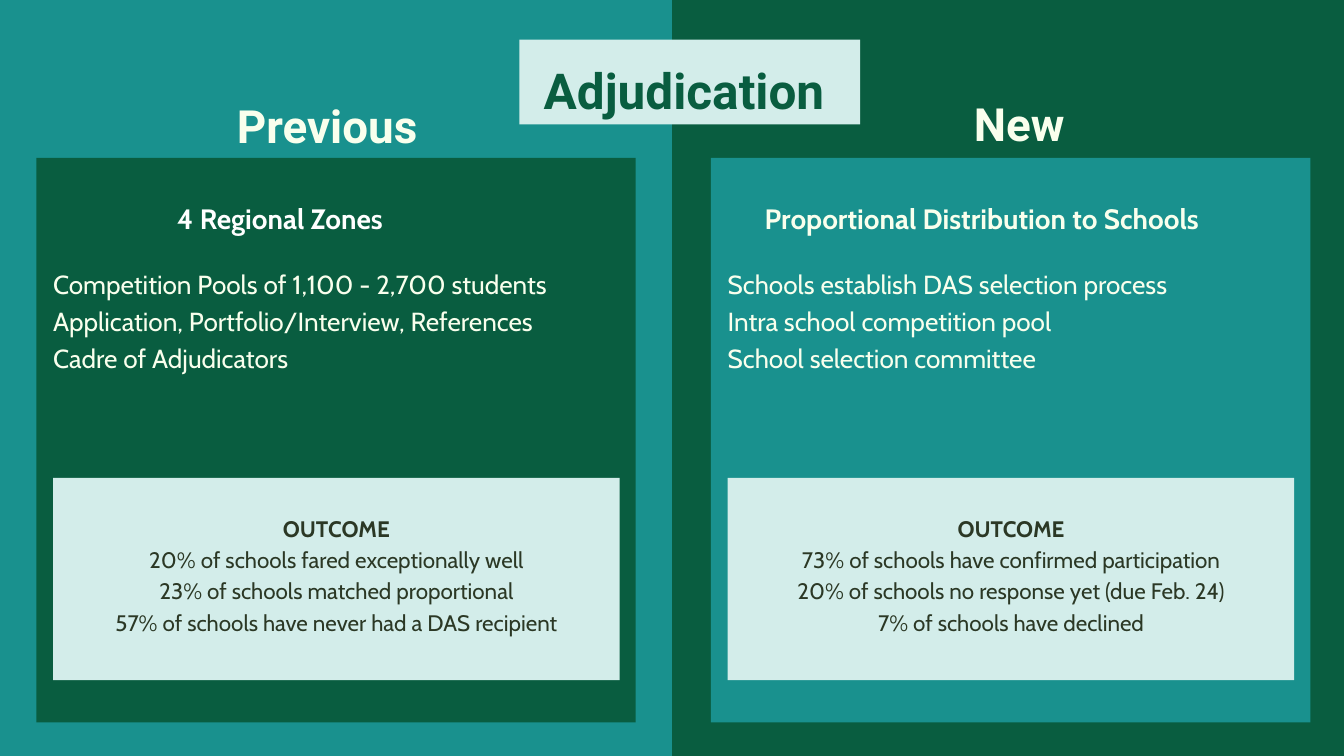
from dataclasses import dataclass

from pptx import Presentation
from pptx.dml.color import RGBColor
from pptx.enum.shapes import MSO_SHAPE
from pptx.enum.text import MSO_AUTO_SIZE, PP_ALIGN
from pptx.slide import Slide
from pptx.util import Inches, Pt

COLORS = {
    "green": "095D40",
    "teal": "19918E",
    "mint": "D3EDEA",
    "cream": "F9FFED",
    "white": "FFFFFF",
    "ink": "2B3825",
}

FORMATS = {
    "title": {"name": "Roboto", "size": Pt(53), "bold": True},
    "heading": {"name": "Roboto", "size": Pt(49), "bold": True},
    "subheading": {"name": "Cabin", "size": Pt(30), "bold": True},
    "body": {"name": "Cabin", "size": Pt(28), "bold": False},
    "outcome_label": {"name": "Cabin", "size": Pt(24), "bold": True},
    "outcome": {"name": "Cabin", "size": Pt(24), "bold": False},
}

LEADING = {
    "title": 58.3,
    "heading": 53.9,
    "subheading": 42.1,
    "body": 39.3,
    "outcome_label": 33.7,
    "outcome": 33.7,
}

SLIDE_WIDTH, SLIDE_HEIGHT = 20, 11.25
PANEL_TOP, PANEL_WIDTH, PANEL_HEIGHT = 2.35, 8.92, 8.4
PANEL_INSET, CONTENT_WIDTH = 0.25, 8.43


@dataclass(frozen=True)
class Box:
    left: float
    top: float
    width: float
    height: float


@dataclass(frozen=True)
class Line:
    text: str
    style: str
    color: str


@dataclass(frozen=True)
class Side:
    panel_left: float
    panel_color: str
    heading: str
    heading_box: Box
    subheading: Line
    subheading_box: Box
    subheading_align: PP_ALIGN
    points: tuple[str, ...]
    points_height: float
    outcomes: tuple[str, ...]


SIDES = (
    Side(
        0.54, "green",
        "Previous", Box(3.11, 1.53, 3.1, 0.76),
        Line("4 Regional Zones ", "subheading", "white"),
        Box(0, 2.91, 8.43, 0.56), PP_ALIGN.CENTER,
        (
            "Competition Pools of 1,100 - 2,700 students",
            "Application, Portfolio/Interview, References",
            "Cadre of Adjudicators",
        ),
        2.15,
        (
            "20% of schools fared exceptionally well",
            "23% of schools matched proportional",
            "57% of schools have never had a DAS recipient",
        ),
    ),
    Side(
        10.58, "teal",
        "New", Box(13.05, 1.5, 2.79, 0.76),
        Line("Proportional Distribution to Schools", "subheading", "cream"),
        Box(11.38, 2.91, 7.31, 0.56), PP_ALIGN.LEFT,
        (
            "Schools establish DAS selection process",
            "Intra school competition pool",
            "School selection committee",
        ),
        1.61,
        (
            "73% of schools have confirmed participation",
            "20% of schools no response yet (due Feb. 24)",
            "7% of schools have declined",
        ),
    ),
)


def rgb(color: str) -> RGBColor:
    return RGBColor.from_string(COLORS[color])


def lengths(box: Box) -> tuple[Inches, ...]:
    return tuple(Inches(v) for v in (box.left, box.top, box.width, box.height))


def draw_block(slide: Slide, box: Box, color: str) -> None:
    block = slide.shapes.add_shape(MSO_SHAPE.RECTANGLE, *lengths(box))
    block.shadow.inherit = False
    block.fill.solid()
    block.fill.fore_color.rgb = rgb(color)
    block.line.fill.background()


def draw_text(slide: Slide, box: Box, lines: list[Line], align: PP_ALIGN) -> None:
    frame = slide.shapes.add_textbox(*lengths(box)).text_frame
    frame_format = {
        "word_wrap": True,
        "auto_size": MSO_AUTO_SIZE.SHAPE_TO_FIT_TEXT,
        "margin_left": 0,
        "margin_top": 0,
        "margin_right": 0,
        "margin_bottom": 0,
    }
    for attribute, value in frame_format.items():
        setattr(frame, attribute, value)
    for index, line in enumerate(lines):
        paragraph = frame.add_paragraph() if index else frame.paragraphs[0]
        paragraph.alignment = align
        paragraph.line_spacing = Pt(LEADING[line.style])
        run = paragraph.add_run()
        run.text = line.text
        for attribute, value in FORMATS[line.style].items():
            setattr(run.font, attribute, value)
        run.font.color.rgb = rgb(line.color)


def draw_side(slide: Slide, side: Side) -> None:
    content_left = side.panel_left + PANEL_INSET
    panel = Box(side.panel_left, PANEL_TOP, PANEL_WIDTH, PANEL_HEIGHT)
    draw_block(slide, panel, side.panel_color)
    draw_block(slide, Box(content_left, 7.11, CONTENT_WIDTH, 3.01), "mint")

    heading = Line(side.heading, "heading", "cream")
    draw_text(slide, side.heading_box, [heading], PP_ALIGN.RIGHT)
    draw_text(slide, side.subheading_box, [side.subheading], side.subheading_align)

    points = [Line(point, "body", "cream") for point in side.points]
    points_box = Box(content_left, 3.92, CONTENT_WIDTH, side.points_height)
    draw_text(slide, points_box, points, PP_ALIGN.LEFT)

    outcomes = [Line("OUTCOME", "outcome_label", "ink")]
    outcomes += [Line(outcome, "outcome", "ink") for outcome in side.outcomes]
    outcomes_box = Box(content_left, 7.59, CONTENT_WIDTH, 1.82)
    draw_text(slide, outcomes_box, outcomes, PP_ALIGN.CENTER)


def main() -> None:
    presentation = Presentation()
    presentation.slide_width = Inches(SLIDE_WIDTH)
    presentation.slide_height = Inches(SLIDE_HEIGHT)
    slide = presentation.slides.add_slide(presentation.slide_layouts[6])
    slide.background.fill.solid()
    slide.background.fill.fore_color.rgb = rgb("green")

    draw_block(slide, Box(0, 0, SLIDE_WIDTH / 2, SLIDE_HEIGHT), "teal")
    for side in SIDES:
        draw_side(slide, side)

    draw_block(slide, Box(7.73, 0.59, 5.07, 1.26), "mint")
    title = Line("Adjudication", "title", "green")
    draw_text(slide, Box(7.73, 0.96, 4.54, 0.82), [title], PP_ALIGN.RIGHT)

    presentation.save("out.pptx")


if __name__ == "__main__":
    main()
